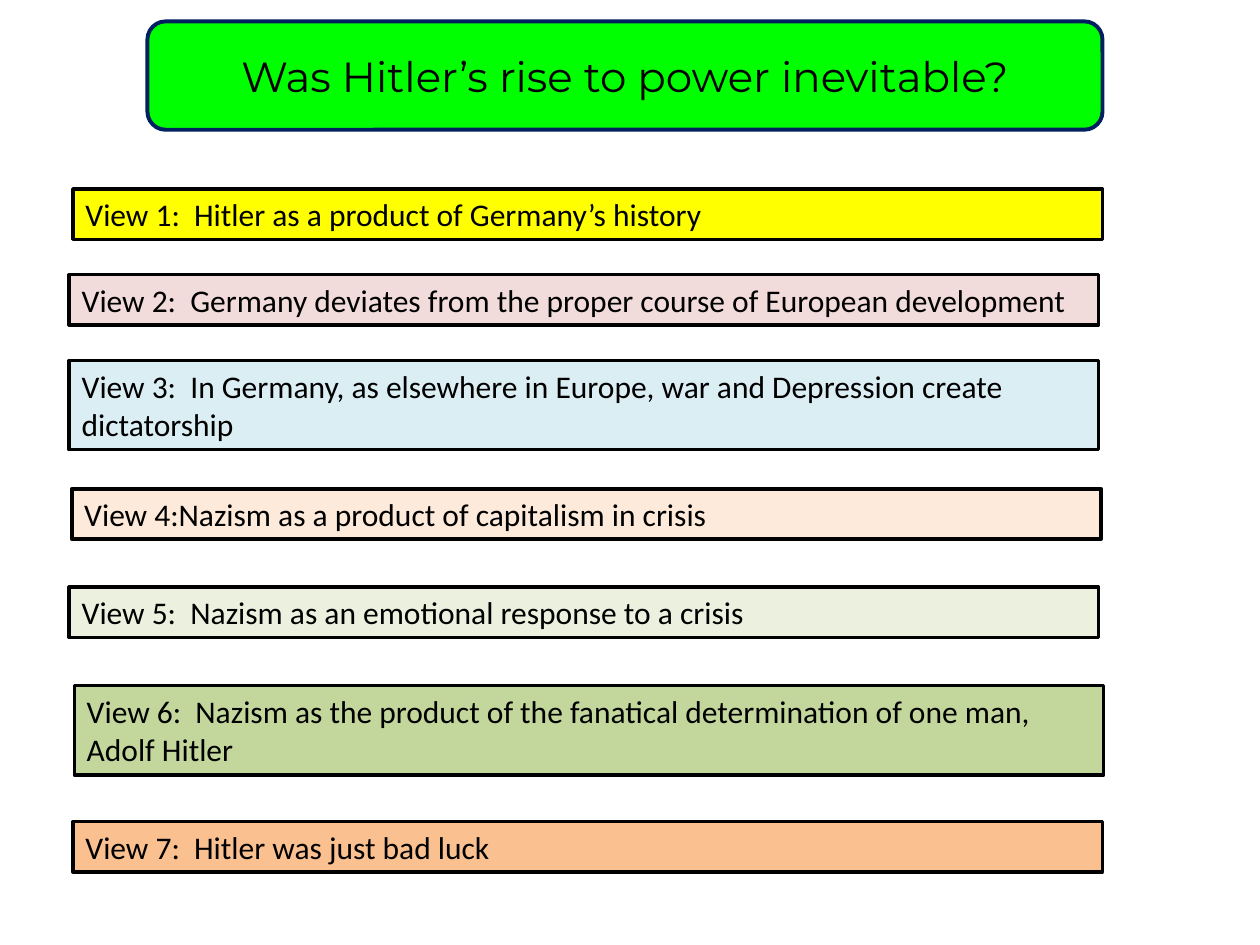
from pptx import Presentation
from pptx.dml.color import RGBColor
from pptx.enum.shapes import MSO_SHAPE
from pptx.enum.text import MSO_ANCHOR, PP_ALIGN
from pptx.util import Inches, Pt

ROUNDED = MSO_SHAPE.ROUNDED_RECTANGLE
RECTANGLE = MSO_SHAPE.RECTANGLE
MIDDLE = MSO_ANCHOR.MIDDLE
CENTER = PP_ALIGN.CENTER
LEFT = PP_ALIGN.LEFT

COLORS = {
    "text": "000000",
    "outline": "000000",
    "title_fill": "00FF00",
    "title_outline": "002060",
    "yellow": "FFFF00",
    "pink": "F2DCDB",
    "blue": "DBEEF4",
    "peach": "FDEADA",
    "pale_green": "EBF1DE",
    "green": "C3D69B",
    "orange": "FAC090",
}

VIEW_WIDTH = 8.17
ONE_LINE, TWO_LINES = 0.4, 0.71

# left, top, height, fill, text
VIEWS = [
    (0.58, 1.5, ONE_LINE, "yellow", "View 1:  Hitler as a product of Germany’s history"),
    (0.55, 2.18, ONE_LINE, "pink",
     "View 2:  Germany deviates from the proper course of European development"),
    (0.55, 2.86, TWO_LINES, "blue",
     "View 3:  In Germany, as elsewhere in Europe, war and Depression create dictatorship"),
    (0.57, 3.88, ONE_LINE, "peach", "View 4:Nazism as a product of capitalism in crisis"),
    (0.55, 4.66, ONE_LINE, "pale_green", "View 5:  Nazism as an emotional response to a crisis"),
    (0.59, 5.44, TWO_LINES, "green",
     "View 6:  Nazism as the product of the fanatical determination of one man, Adolf Hitler"),
    (0.58, 6.52, ONE_LINE, "orange", "View 7:  Hitler was just bad luck"),
]


def rgb(name):
    return RGBColor.from_string(COLORS[name])


def add_text_shape(slide, kind, box, text, fill, outline, line_width, font, size, alignment):
    shape = slide.shapes.add_shape(kind, *(Inches(length) for length in box))
    shape.shadow.inherit = False
    shape.fill.solid()
    shape.fill.fore_color.rgb = rgb(fill)
    shape.line.color.rgb = rgb(outline)
    shape.line.width = Pt(line_width)

    text_frame = shape.text_frame
    text_frame.word_wrap = True
    text_frame.vertical_anchor = MIDDLE
    text_frame.text = text
    paragraph = text_frame.paragraphs[0]
    paragraph.alignment = alignment
    run_font = paragraph.runs[0].font
    run_font.name = font
    run_font.size = Pt(size)
    run_font.color.rgb = rgb("text")


def add_title(slide, box):
    add_text_shape(slide, ROUNDED, box, "Was Hitler’s rise to power inevitable?",
                   "title_fill", "title_outline", 2.25, "Montserrat", 24, CENTER)


def add_view(slide, box, fill, text):
    """Add one historical interpretation as a coloured bar."""
    add_text_shape(slide, RECTANGLE, box, text, fill, "outline", 2, "Calibri", 18, LEFT)


def main():
    presentation = Presentation()
    presentation.slide_width = Inches(10)
    presentation.slide_height = Inches(7.5)
    slide = presentation.slides.add_slide(presentation.slide_layouts[6])

    add_title(slide, (1.17, 0.17, 7.58, 0.86))
    for left, top, height, fill, text in VIEWS:
        add_view(slide, (left, top, VIEW_WIDTH, height), fill, text)

    presentation.save("out.pptx")


if __name__ == "__main__":
    main()
